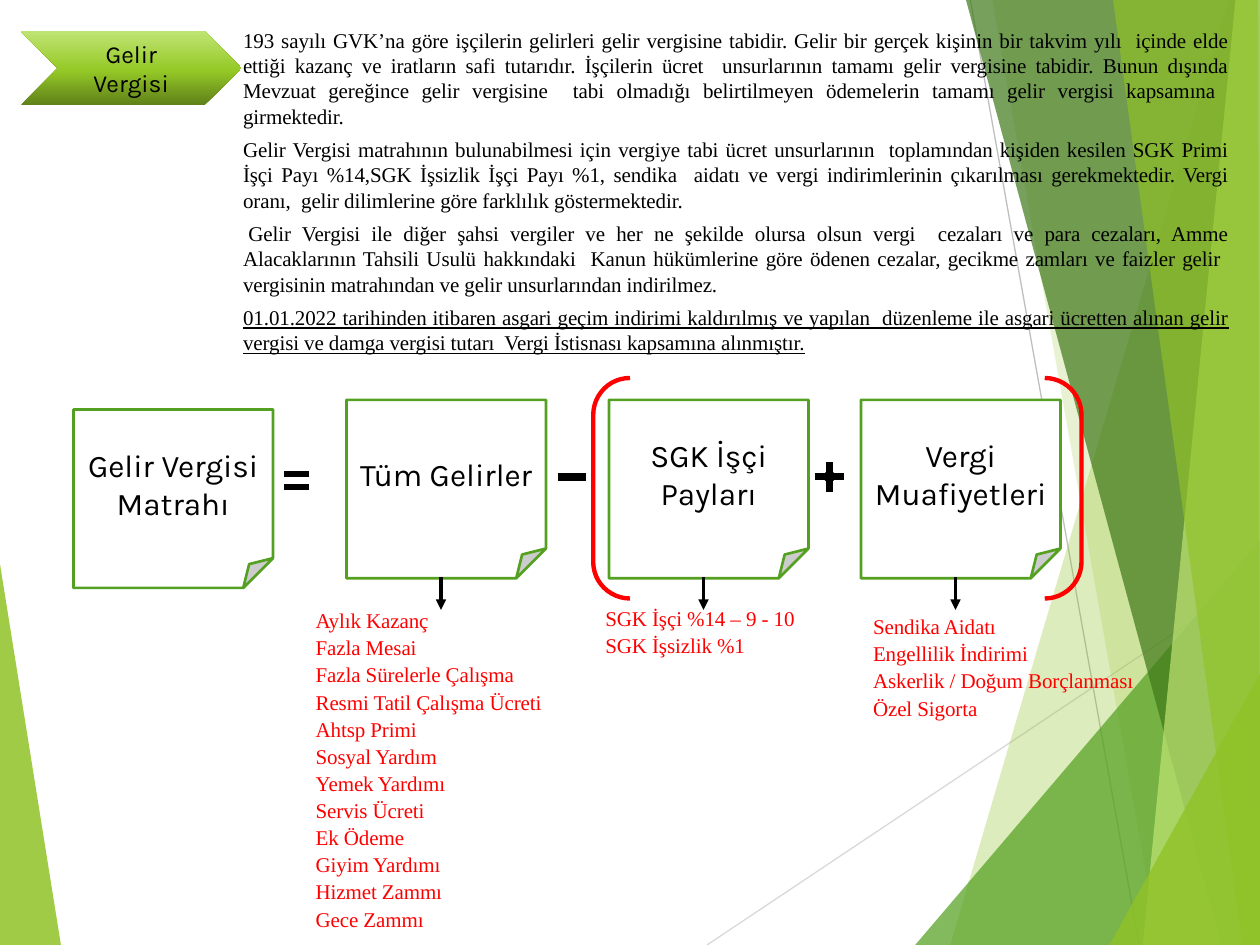
"""Builds the income tax base slide with its formula cards and item lists."""
from copy import deepcopy

from lxml.etree import SubElement
from pptx import Presentation
from pptx.dml.color import RGBColor
from pptx.enum.shapes import MSO_CONNECTOR, MSO_SHAPE
from pptx.enum.text import MSO_ANCHOR, MSO_AUTO_SIZE, PP_ALIGN
from pptx.oxml.ns import qn
from pptx.util import Pt

COLORS = {
    "lime": "90C226", "green": "54A021", "forest": "3F7819", "pale": "C0E474",
    "mid": "95C927", "olive": "608219", "silver": "D9D9D9", "gray": "BFBFBF",
    "red": "FF0000", "black": "000000", "white": "FFFFFF",
}
LEFT_FACET = ([(-0.7, 316), (35.3, 540.7), (-0.7, 540)], "lime", 85)
FACETS = [
    ([(702, 0), (543, 540), (720, 540), (720, 0)], "lime", 30),
    ([(567, 0), (662, 540), (720, 540), (720, 0)], "lime", 20),
    ([(523, 540), (720, 309), (720, 540)], "green", 72),
    ([(552, 0), (698, 540), (720, 540), (720, 0)], "forest", 70),
    ([(706, 0), (653, 540), (720, 540), (720, 0)], "pale", 70),
    ([(636, 0), (710, 540), (720, 540), (719, 0)], "lime", 65),
    ([(634.5, 540), (720, 385), (720, 540)], "lime", 80),
]
BODY = [
    "193 sayılı GVK’na göre işçilerin gelirleri gelir vergisine tabidir. Gelir bir gerçek "
    "kişinin bir takvim yılı  içinde elde ettiği kazanç ve iratların safi tutarıdır. İşçilerin "
    "ücret  unsurlarının tamamı gelir vergisine tabidir. Bunun dışında Mevzuat gereğince gelir "
    "vergisine  tabi olmadığı belirtilmeyen ödemelerin tamamı gelir vergisi kapsamına  "
    "girmektedir.",
    "Gelir Vergisi matrahının bulunabilmesi için vergiye tabi ücret unsurlarının  toplamından "
    "kişiden kesilen SGK Primi İşçi Payı %14,SGK İşsizlik İşçi Payı %1, sendika  aidatı ve vergi "
    "indirimlerinin çıkarılması gerekmektedir. Vergi oranı,  gelir dilimlerine göre farklılık "
    "göstermektedir.",
    "Gelir Vergisi ile diğer şahsi vergiler ve her ne şekilde olursa olsun vergi  cezaları ve "
    "para cezaları, Amme Alacaklarının Tahsili Usulü hakkındaki  Kanun hükümlerine göre ödenen "
    "cezalar, gecikme zamları ve faizler gelir  vergisinin matrahından ve gelir unsurlarından "
    "indirilmez.",
    "01.01.2022 tarihinden itibaren asgari geçim indirimi kaldırılmış ve yapılan  düzenleme ile "
    "asgari ücretten alınan gelir vergisi ve damga vergisi tutarı  Vergi İstisnası kapsamına "
    "alınmıştır.",
]
CARDS = [
    ("Gelir Vergisi Matrahı", 42, 234), ("Tüm Gelirler", 198, 228.5),
    ("SGK İşçi Payları", 348, 228.5), ("Vergi Muafiyetleri", 492, 228.5),
]
OPERATORS = [
    (MSO_SHAPE.MATH_EQUAL, 158.5, 264, 21.5, 21),
    (MSO_SHAPE.MATH_PLUS, 462, 260, 24, 25),
    (MSO_SHAPE.MATH_MINUS, 315, 260, 24, 25),
]
LISTS = [
    (["Aylık Kazanç", "Fazla Mesai", "Fazla Sürelerle Çalışma", "Resmi Tatil Çalışma Ücreti",
      "Ahtsp Primi", "Sosyal Yardım", "Yemek Yardımı", "Servis Ücreti", "Ek Ödeme",
      "Giyim Yardımı", "Hizmet Zammı", "Gece Zammı"], (179.7, 346.5, 141, 186.5)),
    (["SGK İşçi %14 – 9 - 10", "SGK İşsizlik %1"], (345.2, 345.5, 141, 46)),
    (["Sendika Aidatı", "Engellilik İndirimi", "Askerlik / Doğum Borçlanması",
      "Özel Sigorta"], (498.2, 350, 180, 80)),
]
ARROW_XS = [252, 402, 546]


def rgb(name):
    """Return the named colour."""
    return RGBColor.from_string(COLORS[name])


def add_facet(s, points, color, opacity):
    """Add a translucent polygon of the background."""
    builder = s.shapes.build_freeform(*points[0], scale=Pt(1))
    builder.add_line_segments(points[1:], close=True)
    sp = builder.convert_to_shape()
    sp.shadow.inherit = False
    sp.fill.solid()
    sp.fill.fore_color.rgb = rgb(color)
    sp.line.fill.background()
    clr = sp.fill._xPr.find(qn("a:solidFill"))[0]
    SubElement(clr, qn("a:alpha")).set("val", str(opacity * 1000))


def add_line(s, start, end, color, width, arrow=False):
    """Add a straight line, with an arrowhead at its end on request."""
    cx = s.shapes.add_connector(MSO_CONNECTOR.STRAIGHT, *map(Pt, start + end))
    cx.line.color.rgb = rgb(color)
    cx.line.width = Pt(width)
    if arrow:
        SubElement(cx.line._get_or_add_ln(), qn("a:tailEnd")).set("type", "triangle")
    SubElement(cx._element.spPr, qn("a:effectLst"))


def add_shape(s, kind, box, fill=None, line=None, width=1.5):
    """Add a preset shape with plain fill and outline."""
    sp = s.shapes.add_shape(kind, *map(Pt, box))
    sp.shadow.inherit = False
    if fill:
        sp.fill.solid()
        sp.fill.fore_color.rgb = rgb(fill)
    else:
        sp.fill.background()
    if line:
        sp.line.color.rgb = rgb(line)
        sp.line.width = Pt(width)
    else:
        sp.line.fill.background()
    return sp


def add_label(sp, text, size):
    """Write a centred label into a shape."""
    tf = sp.text_frame
    tf.word_wrap = True
    tf.vertical_anchor = MSO_ANCHOR.MIDDLE
    p = tf.paragraphs[0]
    p.text = text
    p.alignment = PP_ALIGN.CENTER
    p.font.name = "Karla"
    p.font.size = Pt(size)
    p.font.color.rgb = rgb("black")


def add_heading(s):
    """Add the chevron with its three-stop gradient."""
    sp = add_shape(s, MSO_SHAPE.CHEVRON, (12, 18, 126, 42))
    sp.fill.gradient()
    sp.fill.gradient_angle = 90
    gs = sp.fill.gradient_stops[0]._gs
    gs.addnext(deepcopy(gs))
    stops = [(0, "olive"), (0.48, "mid"), (1, "pale")]
    for stop, (position, color) in zip(sp.fill.gradient_stops, stops):
        stop.position = position
        stop.color.rgb = rgb(color)
    add_label(sp, "Gelir Vergisi", 14)


def add_text(s, lines, box, color, gap=1.1):
    """Add a justified text box and return its paragraphs."""
    tf = s.shapes.add_textbox(*map(Pt, box)).text_frame
    tf.word_wrap = True
    tf.auto_size = MSO_AUTO_SIZE.SHAPE_TO_FIT_TEXT
    tf.margin_left = tf.margin_right = tf.margin_bottom = 0
    tf.margin_top = Pt(0.7)
    for i, line in enumerate(lines):
        p = tf.add_paragraph() if i else tf.paragraphs[0]
        r = p.add_run()
        r.text = line
        r._r.get_or_add_rPr().set("spc", "-5")
        p.alignment = PP_ALIGN.JUSTIFY
        p.space_before = Pt(gap if i else 1.1)
        p._p.get_or_add_pPr().set("marL", str(Pt(0.7)))
        p.font.name = "Times New Roman"
        p.font.size = Pt(12)
        p.font.color.rgb = rgb(color)
    return tf.paragraphs


def main():
    """Build and save the slide."""
    prs = Presentation()
    prs.slide_width, prs.slide_height = Pt(720), Pt(540)
    s = prs.slides.add_slide(prs.slide_layouts[6])
    add_facet(s, *LEFT_FACET)
    add_line(s, (404, 540), (720, 329), "silver", 0.75)
    add_line(s, (554.5, 0), (651, 540), "gray", 0.75)
    for facet in FACETS:
        add_facet(s, *facet)
    add_heading(s)
    paragraphs = add_text(s, BODY, (138.2, 15, 564, 190), "black", 4.8)
    paragraphs[2]._p.get_or_add_pPr().set("indent", str(Pt(3)))
    paragraphs[3].font.underline = True
    for text, x, y in CARDS:
        card = add_shape(s, MSO_SHAPE.FOLDED_CORNER, (x, y, 114, 102), "white", "green")
        add_label(card, text, 18)
    for kind, *box in OPERATORS:
        add_shape(s, kind, box, "black", "white")
    add_shape(s, MSO_SHAPE.DOUBLE_BRACKET, (339, 216, 279, 126), None, "red", 2.5)
    for lines, box in LISTS:
        add_text(s, lines, box, "red")
    for x in ARROW_XS:
        add_line(s, (x, 330), (x, 348.5), "black", 1.75, True)
    prs.save("out.pptx")


if __name__ == "__main__":
    main()
